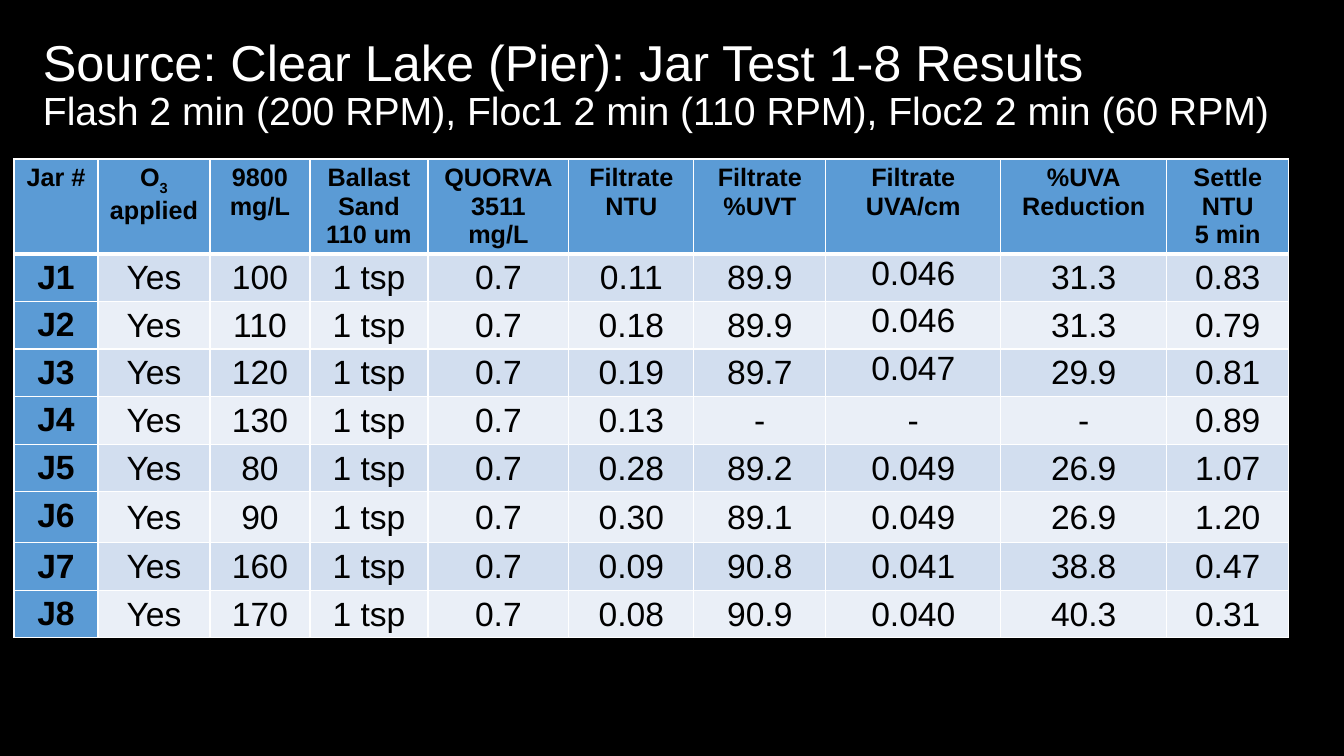
from collections.abc import Sequence
from dataclasses import dataclass

from lxml import etree
from pptx import Presentation
from pptx.dml.color import RGBColor
from pptx.enum.text import MSO_ANCHOR, PP_ALIGN
from pptx.oxml.ns import qn
from pptx.util import Emu, Pt

LEFT, CENTER = PP_ALIGN.LEFT, PP_ALIGN.CENTER
TOP, MIDDLE = MSO_ANCHOR.TOP, MSO_ANCHOR.MIDDLE
EMU_PER_PX = 914400 / 100.8


@dataclass(frozen=True)
class Theme:
    font: str = "Arial"
    background: str = "000000"
    title_text: str = "FFFFFF"
    cell_text: str = "000000"
    border: str = "FFFFFF"
    heading_fill: str = "5B9BD5"
    band_fills: tuple[str, str] = ("D2DEEF", "EAEFF7")
    title_size: int = 36
    subtitle_size: int = 28
    heading_size: int = 18
    value_size: int = 24
    thin_border: int = 1
    thick_border: int = 3


@dataclass(frozen=True)
class Run:
    text: str
    size: int
    bold: bool = False
    subscript: bool = False


@dataclass(frozen=True)
class Column:
    heading: str
    width: int


@dataclass(frozen=True)
class Jar:
    name: str
    dose: str
    filtrate_ntu: str
    uvt: str
    uva: str
    reduction: str
    settle_ntu: str
    height: int = 47
    uva_anchor: MSO_ANCHOR = MIDDLE

    def values(self) -> tuple[str, ...]:
        return (self.name, "Yes", self.dose, "1 tsp", "0.7", self.filtrate_ntu,
                self.uvt, self.uva, self.reduction, self.settle_ntu)


THEME = Theme()
HEADING_HEIGHT = 94
UVA_COLUMN = 7

# An underscore marks the next character as a subscript
COLUMNS = (
    Column("Jar #", 84),
    Column("O_3\napplied", 112),
    Column("9800\nmg/L", 100),
    Column("Ballast\nSand\n110 um", 118),
    Column("QUORVA\n3511\nmg/L", 141),
    Column("Filtrate\nNTU", 125),
    Column("Filtrate\n%UVT", 132),
    Column("Filtrate\nUVA/cm", 175),
    Column("%UVA\nReduction", 166),
    Column("Settle\nNTU\n5 min", 122),
)
JARS = (
    Jar("J1", "100", "0.11", "89.9", "0.046", "31.3", "0.83", uva_anchor=TOP),
    Jar("J2", "110", "0.18", "89.9", "0.046", "31.3", "0.79", uva_anchor=TOP),
    Jar("J3", "120", "0.19", "89.7", "0.047", "29.9", "0.81", uva_anchor=TOP),
    Jar("J4", "130", "0.13", "-", "-", "-", "0.89"),
    Jar("J5", "80", "0.28", "89.2", "0.049", "26.9", "1.07"),
    Jar("J6", "90", "0.30", "89.1", "0.049", "26.9", "1.20", height=51),
    Jar("J7", "160", "0.09", "90.8", "0.041", "38.8", "0.47"),
    Jar("J8", "170", "0.08", "90.9", "0.040", "40.3", "0.31"),
)


def px(length: int) -> Emu:
    return Emu(round(length * EMU_PER_PX))


def write_text(frame, paragraphs: Sequence[Sequence[Run]], *, color: str,
               align: PP_ALIGN, line_spacing: float | None = None) -> None:
    for index, runs in enumerate(paragraphs):
        paragraph = frame.paragraphs[0] if index == 0 else frame.add_paragraph()
        paragraph.alignment = align
        paragraph.line_spacing = line_spacing
        for piece in runs:
            if piece.text == "\n":
                paragraph.add_line_break()
                continue
            run = paragraph.add_run()
            run.text = piece.text
            run.font.name = THEME.font
            run.font.size = Pt(piece.size)
            run.font.bold = piece.bold
            run.font.color.rgb = RGBColor.from_string(color)
            if piece.subscript:
                run.font._element.set("baseline", "-25000")


def heading_runs(line: str) -> list[Run]:
    base, _, subscript = line.partition("_")
    runs = [Run(base, THEME.heading_size, bold=True)]
    if subscript:
        runs.append(Run(subscript, THEME.heading_size, bold=True, subscript=True))
    return runs


def set_borders(cell, *, top: int, bottom: int) -> None:
    properties = cell._tc.get_or_add_tcPr()
    widths = {"lnL": THEME.thin_border, "lnR": THEME.thin_border, "lnT": top, "lnB": bottom}
    for side, width in widths.items():
        line = etree.SubElement(properties, qn(f"a:{side}"), w=str(Pt(width)))
        fill = etree.SubElement(line, qn("a:solidFill"))
        etree.SubElement(fill, qn("a:srgbClr"), val=THEME.border)


def fill_cell(cell, paragraphs: Sequence[Sequence[Run]], *, fill: str,
              top: int = THEME.thin_border, bottom: int = THEME.thin_border) -> None:
    set_borders(cell, top=top, bottom=bottom)
    cell.fill.solid()
    cell.fill.fore_color.rgb = RGBColor.from_string(fill)
    write_text(cell.text_frame, paragraphs, color=THEME.cell_text, align=CENTER)


def add_title(slide) -> None:
    title = slide.shapes.add_textbox(px(33), px(13), px(1257), px(146)).text_frame
    title.word_wrap = True
    title.vertical_anchor = MIDDLE
    write_text(title, [[
        Run("Source: Clear Lake (Pier): Jar Test 1-8 Results", THEME.title_size),
        Run("\n", THEME.title_size),
        Run("Flash 2 min (200 RPM), Floc1 2 min (110 RPM), Floc2 2 min (60 RPM)",
            THEME.subtitle_size),
    ]], color=THEME.title_text, align=LEFT, line_spacing=0.9)


def add_results(slide) -> None:
    heights = [HEADING_HEIGHT, *(jar.height for jar in JARS)]
    width = sum(column.width for column in COLUMNS)
    results = slide.shapes.add_table(len(heights), len(COLUMNS), px(14), px(159),
                                     px(width), px(sum(heights))).table
    results.horz_banding = False
    for row, height in zip(results.rows, heights):
        row.height = px(height)

    # Column headings
    for index, column in enumerate(COLUMNS):
        results.columns[index].width = px(column.width)
        fill_cell(results.cell(0, index),
                  [heading_runs(line) for line in column.heading.split("\n")],
                  fill=THEME.heading_fill, bottom=THEME.thick_border)

    # One row per jar
    for row_index, jar in enumerate(JARS, start=1):
        top = THEME.thick_border if row_index == 1 else THEME.thin_border
        band = THEME.band_fills[(row_index - 1) % 2]
        for index, value in enumerate(jar.values()):
            cell = results.cell(row_index, index)
            is_name = index == 0
            fill_cell(cell, [[Run(value, THEME.value_size, bold=is_name)]],
                      fill=THEME.heading_fill if is_name else band, top=top)
            if not is_name:
                cell.margin_left = cell.margin_top = cell.margin_right = px(1)
                cell.margin_bottom = 0
                cell.vertical_anchor = jar.uva_anchor if index == UVA_COLUMN else MIDDLE


def main() -> None:
    deck = Presentation()
    deck.slide_width, deck.slide_height = px(1344), px(756)
    slide = deck.slides.add_slide(deck.slide_layouts[6])
    slide.background.fill.solid()
    slide.background.fill.fore_color.rgb = RGBColor.from_string(THEME.background)
    add_results(slide)
    add_title(slide)
    deck.save("out.pptx")


if __name__ == "__main__":
    main()
